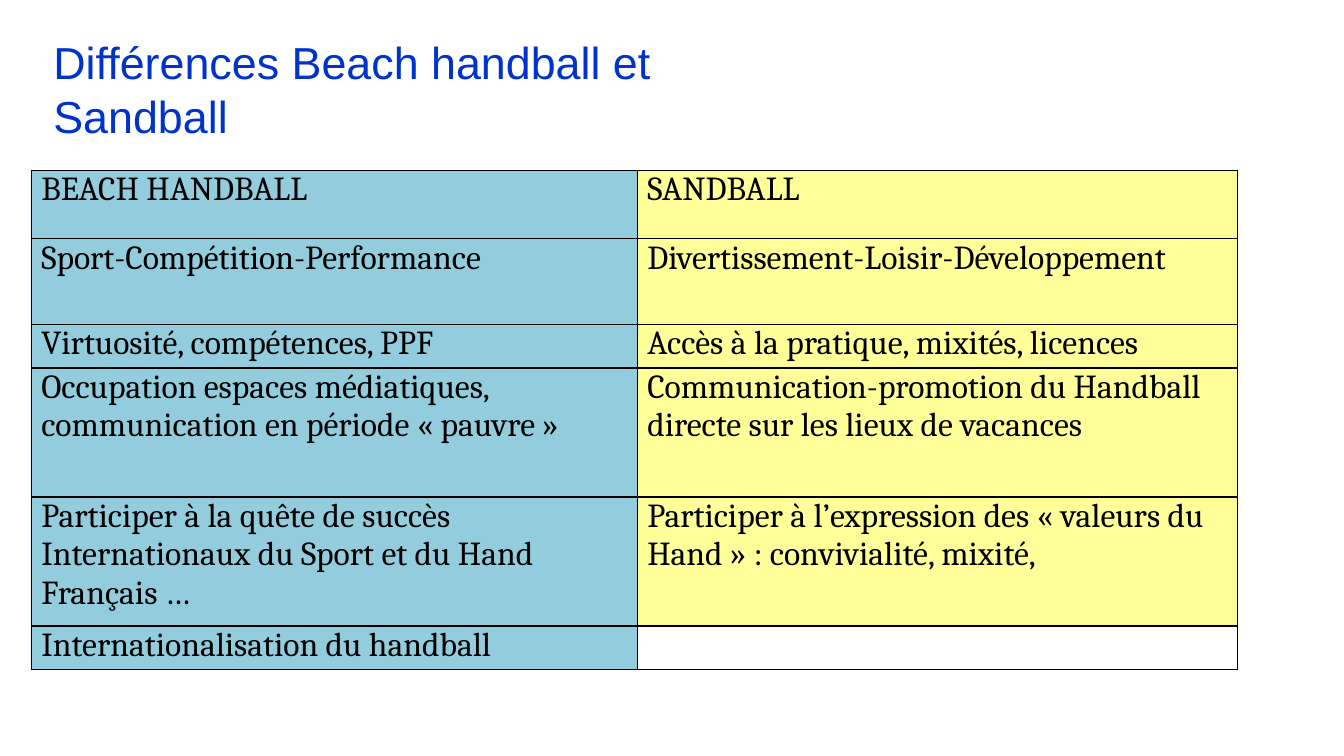
import pptx
import pptx.util
import pptx.dml.color
import pptx.enum.text
import pptx.oxml
import pptx.oxml.ns

Inches, Pt = pptx.util.Inches, pptx.util.Pt
RGB = pptx.dml.color.RGBColor.from_string

THEME = {
    "title": {"font": "Arial", "size": 32, "color": "0033CC"},
    "cell": {"font": "Cambria", "size": 24, "color": "000000"},
    "fills": ("93CDDD", "FFFF99"),
    "border": "000000",
}

ROWS = [
    (0.68, "BEACH HANDBALL", "SANDBALL"),
    (0.85, "Sport-Compétition-Performance", "Divertissement-Loisir-Développement"),
    (0.43, "Virtuosité, compétences, PPF", "Accès à la pratique, mixités, licences"),
    (1.28, "Occupation espaces médiatiques, communication en période « pauvre »",
     "Communication-promotion du Handball directe sur les lieux de vacances"),
    (1.28, "Participer à la quête de succès Internationaux du Sport et du Hand Français …",
     "Participer à l’expression des « valeurs du Hand » : convivialité, mixité,"),
    (0.43, "Internationalisation du handball", ""),
]
COLUMNS = (6.01, 5.95)


def style_text(p, style):
    for r in p.runs:
        r.font.name = style["font"]
        r.font.size = Pt(style["size"])
        r.font.color.rgb = RGB(style["color"])
        r.font.bold = False


def add_borders(cell):
    tcPr = cell._tc.get_or_add_tcPr()
    for i, side in enumerate(("lnL", "lnR", "lnT", "lnB")):
        tcPr.insert(i, pptx.oxml.parse_xml(
            f'<a:{side} {pptx.oxml.ns.nsdecls("a")} w="{Pt(1)}"><a:solidFill>'
            f'<a:srgbClr val="{THEME["border"]}"/></a:solidFill></a:{side}>'))


prs = pptx.Presentation()
prs.slide_width, prs.slide_height = Inches(13.33), Inches(7.5)
s = prs.slides.add_slide(prs.slide_layouts[6])

# Comparison table
height = sum(row[0] for row in ROWS)
table = s.shapes.add_table(len(ROWS), len(COLUMNS), Inches(0.31), Inches(1.69),
                           Inches(sum(COLUMNS)), Inches(height)).table
table.first_row = table.horz_banding = False
for column, width in zip(table.columns, COLUMNS):
    column.width = Inches(width)

for i, (row_height, *texts) in enumerate(ROWS):
    table.rows[i].height = Inches(row_height)
    for j, (text, fill) in enumerate(zip(texts, THEME["fills"])):
        cell = table.cell(i, j)
        cell.margin_left = cell.margin_right = Inches(0.1)
        cell.margin_top = cell.margin_bottom = 0
        cell.text_frame.text = text
        style_text(cell.text_frame.paragraphs[0], THEME["cell"])
        if text:
            cell.fill.solid()
            cell.fill.fore_color.rgb = RGB(fill)
        else:
            cell.fill.background()
        add_borders(cell)

# Title
sp = s.shapes.add_textbox(Inches(0.4), Inches(0.53), Inches(8.03), Inches(0.7))
tf = sp.text_frame
tf.word_wrap = False
tf.vertical_anchor = pptx.enum.text.MSO_ANCHOR.MIDDLE
tf.margin_left = tf.margin_right = Inches(0.13)
tf.margin_top = tf.margin_bottom = Inches(0.07)
tf.text = "Différences Beach handball et Sandball"
style_text(tf.paragraphs[0], THEME["title"])

prs.save("out.pptx")
